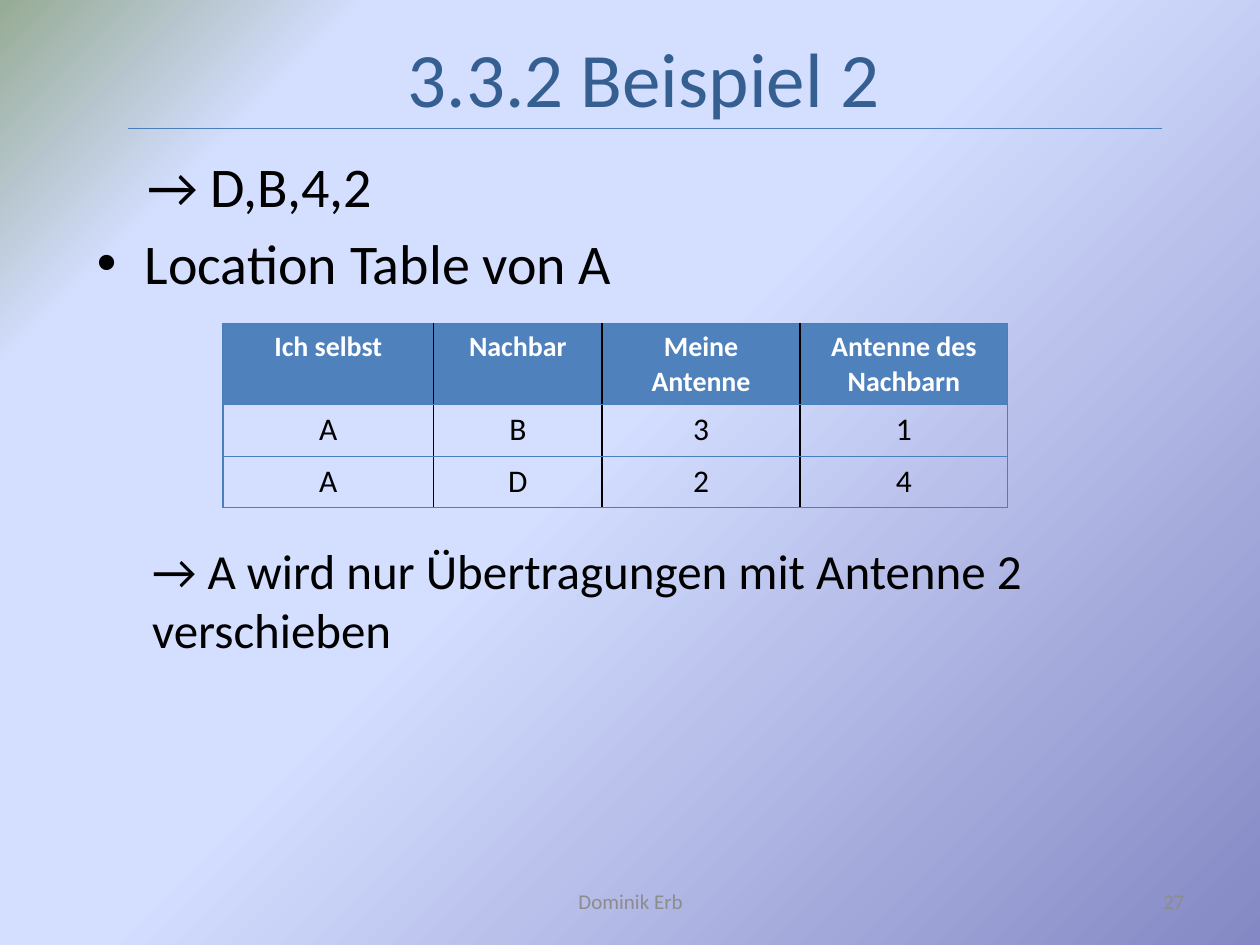
from dataclasses import dataclass

import pptx
import pptx.dml.color
import pptx.enum.shapes
import pptx.enum.text
import pptx.oxml
import pptx.oxml.ns
import pptx.util
from pptx.util import Inches

FONT = "Calibri"
BLUE = "4B7EBC"
BLACK = "000000"
GREY = "8C8C8C"
NAMESPACES = pptx.oxml.ns.nsdecls("a", "p")
ALIGN = pptx.enum.text.PP_ALIGN
ANCHOR = pptx.enum.text.MSO_ANCHOR

GRADIENT = [(0, "8488C4"), (53, "D4DEFF"), (83, "D4DEFF"), (100, "96AB94")]
COLUMN_WIDTHS = [1.67, 1.34, 1.57, 1.65]
ROW_HEIGHTS = [0.64, 0.41, 0.41]
LOCATION_TABLE = [
    ["Ich selbst", "Nachbar", "Meine Antenne", "Antenne des Nachbarn"],
    ["A", "B", "3", "1"],
    ["A", "D", "2", "4"],
]


@dataclass
class Line:
    text: str
    size: float
    color: str = BLACK
    align: ALIGN = ALIGN.LEFT
    margin: float = 0
    space_before: float = 0
    bullet: str = ""


@dataclass
class Box:
    left: float
    top: float
    width: float
    height: float
    lines: list[Line]
    anchor: ANCHOR = ANCHOR.MIDDLE


BOXES = [
    Box(0.86, -0.2, 8.5, 1.61, [Line("3.3.2 Beispiel 2", 44, "365F91", ALIGN.CENTER)]),
    Box(3.42, 6.95, 3.17, 0.4, [Line("Dominik Erb", 12, GREY, ALIGN.CENTER)]),
    Box(7.17, 6.95, 2.33, 0.4, [Line("27", 12, GREY, ALIGN.RIGHT)]),
    Box(0.67, 1.15, 9, 4.95, [
        Line("→ D,B,4,2", 32, margin=0.4),
        Line("Location Table von A", 32, margin=0.38, space_before=5.6, bullet="•"),
        Line("→ A wird nur Übertragungen mit Antenne 2 verschieben", 28,
             margin=0.44, space_before=140),
    ], ANCHOR.TOP),
]


def rgb(value: str) -> pptx.dml.color.RGBColor:
    """Turn a hex string into a colour."""
    return pptx.dml.color.RGBColor.from_string(value)


def style_run(paragraph, size: float, color: str, bold: bool = False) -> None:
    """Format every run of a paragraph."""
    for run in paragraph.runs:
        run.font.name = FONT
        run.font.size = pptx.util.Pt(size)
        run.font.bold = bold
        run.font.color.rgb = rgb(color)


def paint_background(slide) -> None:
    """Give the slide its gradient running out of the lower right corner."""
    stops = "".join(
        f'<a:gs pos="{position * 1000}"><a:srgbClr val="{color}"/></a:gs>'
        for position, color in GRADIENT
    )
    background = pptx.oxml.parse_xml(
        f'<p:bg {NAMESPACES}><p:bgPr><a:gradFill rotWithShape="1"><a:gsLst>{stops}</a:gsLst>'
        '<a:path path="circle"><a:fillToRect l="100000" t="100000"/></a:path>'
        "</a:gradFill><a:effectLst/></p:bgPr></p:bg>"
    )
    slide.element.cSld.insert(0, background)


def add_box(slide, box: Box) -> None:
    """Add a text box with its paragraphs."""
    shape = slide.shapes.add_textbox(
        Inches(box.left), Inches(box.top), Inches(box.width), Inches(box.height))
    frame = shape.text_frame
    frame.word_wrap = True
    frame.vertical_anchor = box.anchor
    frame.text = "\n".join(line.text for line in box.lines)
    for paragraph, line in zip(frame.paragraphs, box.lines):
        paragraph.alignment = line.align
        paragraph.space_before = pptx.util.Pt(line.space_before)
        style_run(paragraph, line.size, line.color)
        properties = paragraph._p.get_or_add_pPr()
        properties.set("marL", str(Inches(line.margin)))
        if line.bullet:
            properties.set("indent", str(-Inches(line.margin)))
            properties.append(pptx.oxml.parse_xml(
                f'<a:buFont {NAMESPACES} typeface="Arial"/>'))
            properties.append(pptx.oxml.parse_xml(
                f'<a:buChar {NAMESPACES} char="{line.bullet}"/>'))


def add_rule(slide) -> None:
    """Underline the title."""
    rule = slide.shapes.add_connector(
        pptx.enum.shapes.MSO_CONNECTOR.STRAIGHT,
        Inches(1.02), Inches(1.02), Inches(9.22), Inches(1.02))
    rule.line.color.rgb = rgb(BLUE)
    rule.line.width = pptx.util.Pt(0.75)
    rule._element.spPr.append(pptx.oxml.parse_xml(f"<a:effectLst {NAMESPACES}/>"))


def set_border(cell, side: str, color: str, width: float) -> None:
    """Draw one side of a table cell."""
    cell._tc.get_or_add_tcPr().append(pptx.oxml.parse_xml(
        f'<a:ln{side} {NAMESPACES} w="{pptx.util.Pt(width)}"><a:solidFill>'
        f'<a:srgbClr val="{color}"/></a:solidFill></a:ln{side}>'))


def add_location_table(slide) -> None:
    """Add the location table with black inner column lines."""
    table = slide.shapes.add_table(
        len(ROW_HEIGHTS), len(COLUMN_WIDTHS), Inches(1.77), Inches(2.57),
        Inches(sum(COLUMN_WIDTHS)), Inches(sum(ROW_HEIGHTS))).table
    table.horz_banding = False
    for column, width in zip(table.columns, COLUMN_WIDTHS):
        column.width = Inches(width)
    inner, outer = (BLACK, 1), (BLUE, 0.75)
    last = len(COLUMN_WIDTHS) - 1
    for row_index, texts in enumerate(LOCATION_TABLE):
        table.rows[row_index].height = Inches(ROW_HEIGHTS[row_index])
        header = row_index == 0
        for column_index, text in enumerate(texts):
            cell = table.cell(row_index, column_index)
            cell.text_frame.text = text
            paragraph = cell.text_frame.paragraphs[0]
            paragraph.alignment = ALIGN.CENTER
            style_run(paragraph, 16 if header else 18, "FFFFFF" if header else BLACK, header)
            set_border(cell, "L", *(outer if column_index == 0 else inner))
            set_border(cell, "R", *(outer if column_index == last else inner))
            set_border(cell, "T", *outer)
            set_border(cell, "B", *outer)
            if header:
                cell.fill.solid()
                cell.fill.fore_color.rgb = rgb("4F81BD")
            else:
                cell.fill.background()


def main() -> None:
    """Build the slide and save it."""
    presentation = pptx.Presentation()
    presentation.slide_width = Inches(10)
    presentation.slide_height = Inches(7.5)
    slide = presentation.slides.add_slide(presentation.slide_layouts[6])
    paint_background(slide)
    add_rule(slide)
    for box in BOXES:
        add_box(slide, box)
    add_location_table(slide)
    presentation.save("out.pptx")


if __name__ == "__main__":
    main()
